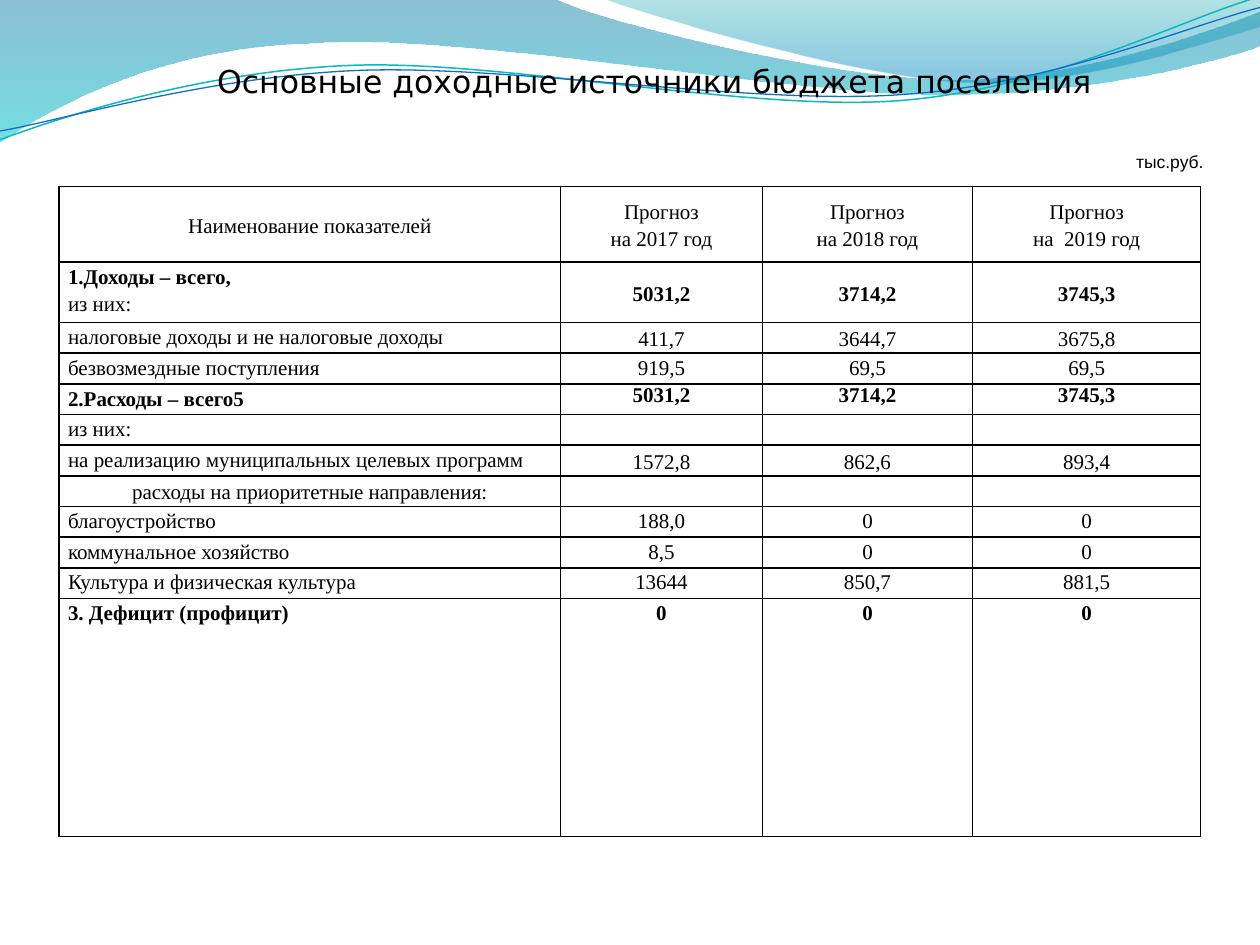
import math

import pptx
import pptx.dml.color
import pptx.enum.text
import pptx.oxml
import pptx.oxml.ns
import pptx.util
from lxml import etree

Inches, Pt = pptx.util.Inches, pptx.util.Pt
RGB = pptx.dml.color.RGBColor.from_string
ALIGN, ANCHOR = pptx.enum.text.PP_ALIGN, pptx.enum.text.MSO_ANCHOR
qn = pptx.oxml.ns.qn
INK = {"black": "000000", "deep": "0074A1", "cyan": "00C6CF", "teal": "00A1A9",
       "sky": "008BBF", "aqua": "0AB8BF", "blue": "0F6FC6"}

deck = pptx.Presentation()
deck.slide_width, deck.slide_height = Inches(10), Inches(7.5)
slide = deck.slides.add_slide(deck.slide_layouts[6])


def trace(path, close):
    """Draw a path of points (2 numbers) and Bezier curves (6 numbers) in inches."""
    dots = [(Inches(step[i]), Inches(step[i + 1]))
            for step in path for i in range(0, len(step), 2)]
    pen = slide.shapes.build_freeform(*dots[0])
    pen.add_line_segments(dots[1:], close=close)
    shape = pen.convert_to_shape()
    shape.shadow.inherit = False
    legs = iter(list(shape.element.spPr.iter(qn("a:lnTo"))))
    for step in path[1:]:
        leg = next(legs)
        if len(step) == 6:
            leg.addprevious(etree.Element(qn("a:cubicBezTo")))
            curve = leg.getprevious()
            for part in (leg, next(legs), next(legs)):
                curve.append(part[0])
                part.getparent().remove(part)
    return shape


# Wave bands: path, then gradient stops of position, colour, opacity
bands = [
    ([(0, 0), (4.4, -0.01), (4.76, 0.17, 6.64, 0.63, 7.58, 0.63),
      (8.53, 0.63, 9.58, 0.26, 10, 0.09), (10.01, 0.36),
      (9.83, 0.44, 8.7, 0.76, 7.46, 0.75), (6.22, 0.75, 3.82, 0.28, 2.57, 0.34),
      (1.29, 0.36, 0.46, 0.83, -0.01, 1.13), (0, 0)],
     [(0, "deep", 45), (1, "cyan", 55)]),
    ([(4.79, -0.01), (5.09, 0.11, 6.82, 0.62, 7.69, 0.65),
      (8.56, 0.69, 9.61, 0.32, 10, 0.21), (10, 0), (4.79, -0.01)],
     [(0, "teal", 30), (0.8, "sky", 45)]),
]
for path, stops in bands:
    band = trace(path, True)
    band.line.fill.background()
    band.fill.gradient()
    band.fill.gradient_angle = 270
    for stop, (place, hue, alpha) in zip(band.fill.gradient_stops, stops):
        stop.position = place
        stop.color.rgb = RGB(INK[hue])
    for tint, (_, _, alpha) in zip(band.element.spPr.iter(qn("a:srgbClr")), stops):
        etree.SubElement(tint, qn("a:alpha")).set("val", str(alpha * 1000))

# Wave lines lie in boxes tilted about their middle
tilt = 2.7
sin, cos = math.sin(math.radians(tilt)), math.cos(math.radians(tilt))
waves = [
    ([(0, 1.11), (0.48, 0.93, 1.58, 0.57, 2.77, 0.52), (3.95, 0.47, 5.93, 0.89, 7.13, 0.8),
      (8.33, 0.71, 9.38, 0.15, 9.98, -0.02)], 0.58, "aqua", 0.85),
    ([(0, 1.04), (0.47, 0.96, 1.64, 0.61, 2.83, 0.56), (4.03, 0.51, 5.97, 0.84, 7.17, 0.75),
      (8.36, 0.67, 9.41, 0.21, 10, 0.06)], 0.59, "blue", 0.75),
]
for path, mid, hue, width in waves:
    level = []
    for step in path:
        turned = []
        for x, y in zip(step[::2], step[1::2]):
            dx, dy = x - 5, y - mid
            turned += [5 + dx * cos - dy * sin, mid + dx * sin + dy * cos]
        level.append(turned)
    wave = trace(level, False)
    wave.rotation = 360 - tilt
    wave.fill.background()
    wave.line.color.rgb = RGB(INK[hue])
    wave.line.width = Pt(width)

labels = [
    ("тыс.руб.", (7.92, 1.15, 1.73, 0.27), ALIGN.RIGHT, 10, "Arial"),
    ("Основные доходные источники бюджета поселения ", (1.06, 0.44, 8.35, 0.85),
     ALIGN.CENTER, 18, "DejaVu Sans"),
]
for text, box, align, size, face in labels:
    frame = slide.shapes.add_textbox(*map(Inches, box)).text_frame
    frame.word_wrap = True
    para = frame.paragraphs[0]
    para.text, para.alignment = text, align
    para.font.size, para.font.name = Pt(size), face
    para.font.color.rgb = RGB(INK["black"])

# Budget table
data = [
    ("Наименование показателей", "Прогноз\nна 2017 год", "Прогноз\nна 2018 год",
     "Прогноз\nна  2019 год"),
    ("1.Доходы – всего, \nиз них:", "5031,2", "3714,2", "3745,3"),
    ("налоговые доходы и не налоговые доходы", "411,7", "3644,7", "3675,8"),
    ("безвозмездные поступления", "919,5", "69,5", "69,5"),
    ("2.Расходы – всего5", "5031,2", "3714,2", "3745,3"),
    ("из них:", "", "", ""),
    ("на реализацию муниципальных целевых программ ", "1572,8", "862,6", "893,4"),
    ("расходы на приоритетные направления:", "", "", ""),
    ("благоустройство", "188,0", "0", "0"),
    ("коммунальное хозяйство", "8,5", "0", "0"),
    ("Культура и физическая культура  ", "13644", "850,7", "881,5"),
    ("3. Дефицит (профицит)", "0", "0", "0"),
]
wide = [3.98, 1.6, 1.67, 1.81]
high = 5.16
head, total, last = 0.6, 0.48, 1.89
tall = [head, total] + [(high - head - total - last) / 9] * 9 + [last]
bold = {1, 4, 11}
centred = {0, 7}
middle = {0, 1, 2, 6}

box = map(Inches, (0.47, 1.48, sum(wide), high))
table = slide.shapes.add_table(len(data), len(wide), *box).table
table.first_row = table.horz_banding = False
for col, size in zip(table.columns, wide):
    col.width = Inches(size)
for row, size in zip(table.rows, tall):
    row.height = Inches(size)

for r, row in enumerate(data):
    for c, text in enumerate(row):
        cell = table.cell(r, c)
        cell.margin_left = cell.margin_right = Inches(0.07)
        cell.margin_top = cell.margin_bottom = 0
        mid = r in (centred if c == 0 else middle)
        cell.vertical_anchor = ANCHOR.MIDDLE if mid else ANCHOR.TOP
        for side in ("lnL", "lnR", "lnT", "lnB"):
            edge = etree.SubElement(cell._tc.get_or_add_tcPr(), qn("a:" + side), w=str(Pt(1)))
            fill = etree.SubElement(edge, qn("a:solidFill"))
            etree.SubElement(fill, qn("a:srgbClr"), val=INK["black"])
        cell.fill.background()
        cell.text_frame.text = text
        for n, para in enumerate(cell.text_frame.paragraphs):
            para.alignment = ALIGN.JUSTIFY if c == 0 and r not in centred else ALIGN.CENTER
            if not (r == 4 and c > 0):
                para.line_spacing = 1.15
            para.font.size, para.font.name = Pt(12), "Times New Roman"
            para.font.bold = r in bold and n == 0
            para.font.color.rgb = RGB(INK["black"])
            if not text:
                etree.SubElement(para._p, qn("a:endParaRPr"), sz="1200")

deck.save("out.pptx")
